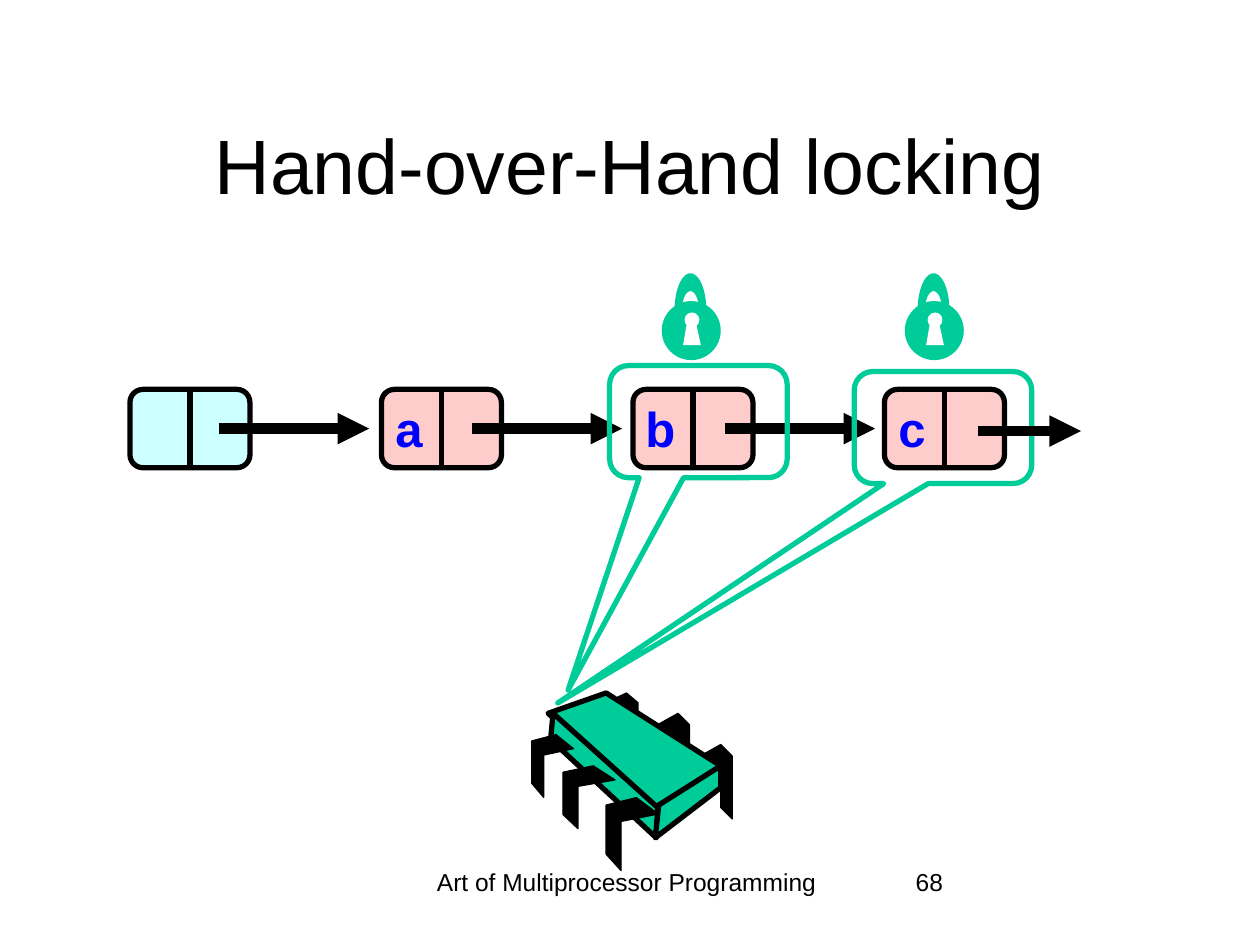
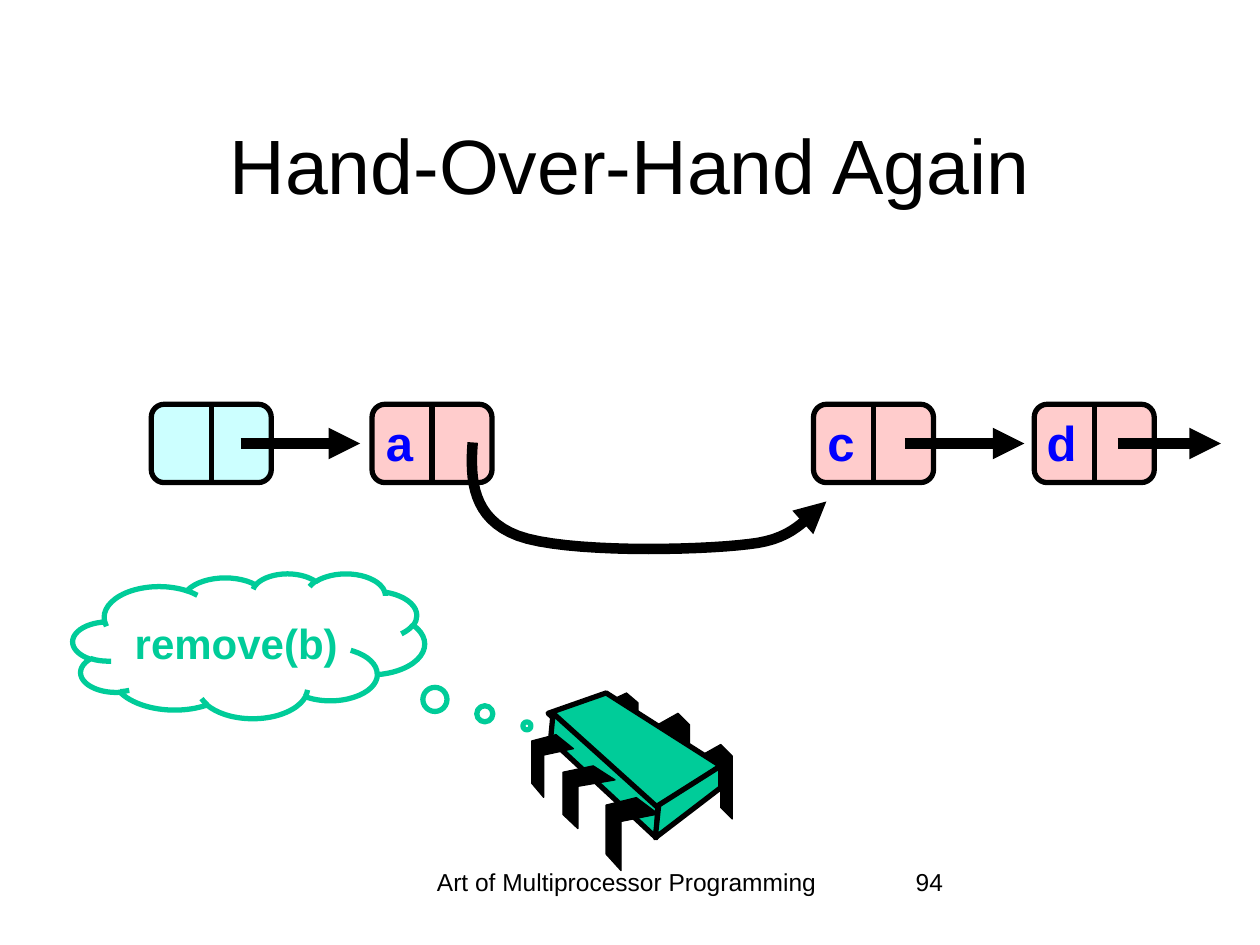
from math import cos, pi, sin

from lxml.etree import SubElement
from pptx import Presentation
from pptx.dml.color import RGBColor
from pptx.enum.shapes import MSO_CONNECTOR as Connector, MSO_SHAPE as Preset
from pptx.enum.text import MSO_ANCHOR as Anchor, PP_ALIGN as Align
from pptx.oxml.ns import qn
from pptx.util import Cm, Pt

FONT = "Arial"
BLACK, WHITE, GREEN, BLUE = "000000", "FFFFFF", "00CC99", "0000FF"
HEAD_FILL, NODE_FILL = "CCFFFF", "FFCCCC"
FOOTER = "Art of Multiprocessor Programming"
TITLE_ONLY = 5

NODE_WIDTH, NODE_HEIGHT = 2.42, 1.58
BACK_LEG = [(0, 0.23), (0.41, 0), (0.64, 0.23), (0.64, 1.5),
            (0.41, 1.27), (0.41, 0.43), (0, 0.64)]
FRONT_LEG = [(0.61, 0), (1.05, 0.33), (0.3, 0.48), (0.3, 1.47),
             (0, 1.14), (0, 0.15)]
BACK_LEG_PLACES = [(14.12, 15.01, 1, 1), (13.26, 14.38, 1, 1),
                   (12.22, 13.97, 1, 0.85)]
FRONT_LEG_PLACES = [(12.22, 16.08, 1, 1), (11.35, 15.44, 1, 0.86),
                    (10.72, 14.81, 0.8, 0.86)]
CHIP_FACES = [
    [(12.22, 13.97), (14.53, 15.44), (13.23, 16.33), (11.05, 14.38)],
    [(11.15, 14.38), (13.26, 16.28), (13.23, 16.89), (11.1, 14.91)],
    [(14.53, 15.44), (14.53, 15.88), (13.21, 16.89), (13.28, 16.23)],
]
BYPASS = [
    [(9.53, 8.92), (9.47, 9.68), (9.53, 10.46), (10.44, 10.8)],
    [(10.44, 10.8), (11.38, 11.15), (14.05, 11.1), (15.09, 10.97)],
    [(15.09, 10.97), (16.13, 10.87), (16.33, 10.29), (16.66, 10.11)],
]


def rgb(color):
    return RGBColor.from_string(color)


def write(frame, text, size, color=BLACK, bold=False, align=Align.LEFT):
    paragraph = frame.paragraphs[0]
    paragraph.alignment = align
    run = paragraph.add_run()
    run.text = text
    run.font.name = FONT
    run.font.size = Pt(size)
    run.font.bold = bold
    run.font.color.rgb = rgb(color)


def paint(shape, fill=None, line=None, width=3):
    shape.shadow.inherit = False
    if fill:
        shape.fill.solid()
        shape.fill.fore_color.rgb = rgb(fill)
    else:
        shape.fill.background()
    if line:
        shape.line.color.rgb = rgb(line)
        shape.line.width = Pt(width)
    else:
        shape.line.fill.background()


def add_preset(shapes, preset, box, fill=None, line=None, adjustments=()):
    shape = shapes.add_shape(preset, *map(Cm, box))
    for index, value in enumerate(adjustments):
        shape.adjustments[index] = value
    paint(shape, fill, line)
    return shape


def add_outline(shapes, points, fill=None, line=None, width=3, close=True):
    corners = [(Cm(x), Cm(y)) for x, y in points]
    builder = shapes.build_freeform(*corners[0], scale=1.0)
    builder.add_line_segments(corners[1:], close=close)
    shape = builder.convert_to_shape()
    paint(shape, fill, line, width)
    return shape


def add_line(shapes, start, end, width):
    connector = shapes.add_connector(Connector.STRAIGHT, *map(Cm, start + end))
    connector.line.color.rgb = rgb(BLACK)
    connector.line.width = Pt(width)
    SubElement(connector._element.spPr, qn("a:effectLst"))
    return connector


def add_arrowhead(shape):
    SubElement(shape.line._get_or_add_ln(), qn("a:tailEnd"), type="triangle")


def add_arrow(slide, x, y, length):
    add_arrowhead(add_line(slide.shapes, (x, y), (x + length, y), 6))


def add_text(shapes, box, text, size, wrap=True, **style):
    frame = shapes.add_textbox(*map(Cm, box)).text_frame
    frame.word_wrap = wrap
    write(frame, text, size, **style)


def add_node(slide, x, y, label):
    shapes = slide.shapes.add_group_shape().shapes
    body = add_preset(shapes, Preset.ROUNDED_RECTANGLE,
                      (x, y, NODE_WIDTH, NODE_HEIGHT),
                      NODE_FILL if label else HEAD_FILL, BLACK)
    middle = x + NODE_WIDTH / 2
    divider = add_line(shapes, (middle, y), (middle, y + NODE_HEIGHT), 3)
    divider.begin_connect(body, 0)
    divider.end_connect(body, 2)
    if label:
        add_text(shapes, (x, y + 0.05, 1.08, 1.45), label, 28, wrap=False,
                 color=BLUE, bold=True, align=Align.RIGHT)


def arch(x, y, radius_x, radius_y, steps=24):
    angles = [pi - pi * step / steps for step in range(steps + 1)]
    return [(x + radius_x * cos(angle), y - radius_y * sin(angle))
            for angle in angles]


def add_lock(slide, x, y=6.07):
    shapes = slide.shapes.add_group_shape().shapes
    add_preset(shapes, Preset.OVAL, (x, y, 1.19, 1.19), GREEN)
    add_preset(shapes, Preset.OVAL, (x + 0.46, y + 0.23, 0.3, 0.3), WHITE)
    keyhole = [(0.43, 0.89), (0.51, 0.43), (0.69, 0.43), (0.79, 0.89)]
    add_outline(shapes, [(x + dx, y + dy) for dx, dy in keyhole], WHITE)
    center = (x + 0.58, y + 0.18)
    shackle = arch(*center, 0.17, 0.38) + arch(*center, 0.32, 0.74)[::-1]
    add_outline(shapes, shackle, GREEN)


def add_legs(shapes, leg, places):
    for x, y, scale_x, scale_y in places:
        points = [(x + dx * scale_x, y + dy * scale_y) for dx, dy in leg]
        add_outline(shapes, points, BLACK, BLACK, 0.75)


def add_chip(slide):
    shapes = slide.shapes.add_group_shape().shapes
    add_legs(shapes, BACK_LEG, BACK_LEG_PLACES)
    for face in CHIP_FACES:
        add_outline(shapes, face, GREEN, BLACK)
    add_legs(shapes, FRONT_LEG, FRONT_LEG_PLACES)


def add_lock_callout(slide, x, y, tip_x, tip_y):
    add_preset(slide.shapes, Preset.ROUNDED_RECTANGULAR_CALLOUT,
               (x, y, 3.58, 2.26), line=GREEN,
               adjustments=(tip_x, tip_y, 0.167))


def bezier(controls, steps=16):
    points = []
    for step in range(steps + 1):
        t = step / steps
        weights = ((1 - t) ** 3, 3 * t * (1 - t) ** 2, 3 * t * t * (1 - t), t ** 3)
        points.append(tuple(sum(weight * value for weight, value in zip(weights, axis))
                            for axis in zip(*controls)))
    return points


def add_bypass(slide):
    points = bezier(BYPASS[0])
    for controls in BYPASS[1:]:
        points += bezier(controls)[1:]
    add_arrowhead(add_outline(slide.shapes, points, line=BLACK, width=6, close=False))


def add_thought(slide, text):
    cloud = add_preset(slide.shapes, Preset.CLOUD_CALLOUT,
                       (1.47, 11.56, 7.09, 2.92), line=GREEN,
                       adjustments=(0.791, 0.553))
    cloud.text_frame.vertical_anchor = Anchor.MIDDLE
    write(cloud.text_frame, text, 24, GREEN, True, Align.CENTER)


def add_slide(presentation, title_text, number):
    slide = presentation.slides.add_slide(presentation.slide_layouts[TITLE_ONLY])
    title = slide.shapes.title
    title.left, title.top, title.width, title.height = map(Cm, (1.9, 1.7, 21.6, 3.18))
    title.text_frame.vertical_anchor = Anchor.MIDDLE
    write(title.text_frame, title_text, 44, align=Align.CENTER)
    add_text(slide.shapes, (7.87, 17.35, 9.53, 1.27), FOOTER, 14, align=Align.CENTER)
    add_text(slide.shapes, (18.21, 17.35, 5.28, 1.27), number, 14)
    return slide


def build_locking(presentation):
    slide = add_slide(presentation, "Hand-over-Hand locking", "68")
    for index, label in enumerate(["", "a", "b", "c"]):
        add_node(slide, 2.62 + 5.07 * index, 7.85, label)
    for index in range(3):
        add_arrow(slide, 4.42 + 5.1 * index, 8.64, 3.02)
    add_lock(slide, 18.24)
    add_chip(slide)
    add_lock_callout(slide, 17.22, 7.49, -2.169, 2.457)
    add_lock(slide, 13.34)
    add_lock_callout(slide, 12.29, 7.37, -0.734, 2.395)
    add_arrow(slide, 19.71, 8.69, 2.08)


def build_again(presentation):
    slide = add_slide(presentation, "Hand-Over-Hand Again", "94")
    for position, label in [(0, ""), (1, "a"), (3, "c"), (4, "d")]:
        add_node(slide, 3.05 + 4.45 * position, 8.15, label)
    for x, length in [(4.85, 2.41), (18.24, 2.41), (22.53, 2.08)]:
        add_arrow(slide, x, 8.94, length)
    add_chip(slide)
    add_bypass(slide)
    add_thought(slide, "remove(b)")


def main():
    presentation = Presentation()
    presentation.slide_width, presentation.slide_height = Cm(25.4), Cm(19.05)
    build_locking(presentation)
    build_again(presentation)
    presentation.save("out.pptx")


if __name__ == "__main__":
    main()
